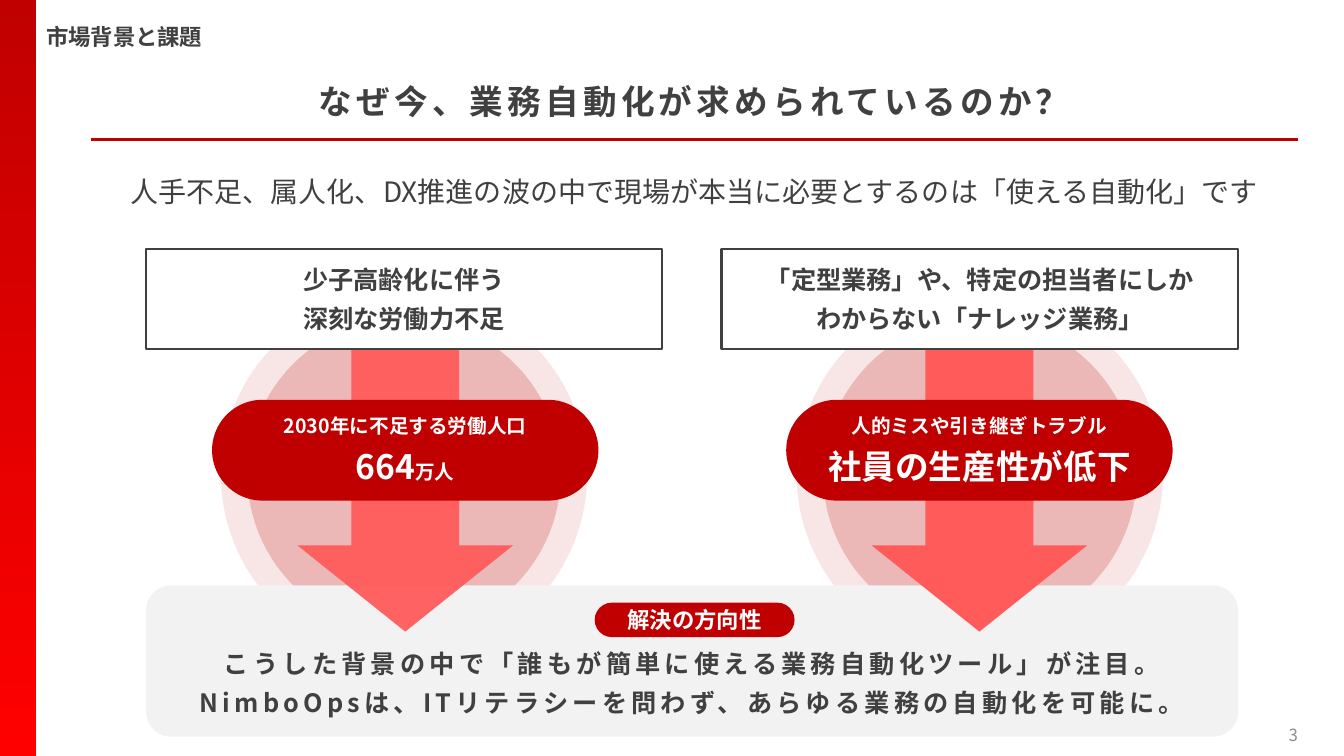
from lxml.etree import SubElement
from pptx import Presentation
from pptx.dml.color import RGBColor
from pptx.enum.shapes import MSO_CONNECTOR, MSO_SHAPE as Preset
from pptx.enum.text import MSO_ANCHOR as Anchor, PP_ALIGN as Align
from pptx.oxml.ns import qn
from pptx.util import Inches, Pt

COLUMNS, ROWS = 160, 90
RED, CORAL, DARK, WHITE, PALE, GREY = "C00000", "FF5B5B", "404040", "FFFFFF", "F2F2F2", "8C8C8C"


def color(hex_string):
    return RGBColor.from_string(hex_string)


class SlideBuilder:
    """Draws on one slide; every length is in columns or rows of the grid."""

    font_name = "Noto Sans CJK JP"

    def __init__(self, presentation):
        self.column = presentation.slide_width / COLUMNS
        self.row = presentation.slide_height / ROWS
        self.slide = presentation.slides.add_slide(presentation.slide_layouts[6])

    def place(self, left, top, width, height):
        return (round(left * self.column), round(top * self.row),
                round(width * self.column), round(height * self.row))

    def shape(self, preset, box, fill, opacity=100, line=None, adjustments=()):
        shape = self.slide.shapes.add_shape(preset, *self.place(*box))
        shape.shadow.inherit = False
        for index, value in enumerate(adjustments):
            shape.adjustments[index] = value
        shape.fill.solid()
        shape.fill.fore_color.rgb = color(fill)
        if opacity < 100:
            srgb = shape._element.spPr.find(".//" + qn("a:srgbClr"))
            SubElement(srgb, qn("a:alpha"), val=str(opacity * 1000))
        if line:
            shape.line.color.rgb = color(line)
            shape.line.width = Pt(1.5)
        else:
            shape.line.fill.background()
        return shape

    def centered(self, preset, center, top, width, height, fill, **style):
        return self.shape(preset, (center - width / 2, top, width, height), fill, **style)

    def gradient_bar(self, box, colors):
        bar = self.shape(Preset.RECTANGLE, box, colors[0])
        bar.fill.gradient()
        bar.fill.gradient_angle = 270
        for stop, stop_color in zip(bar.fill.gradient_stops, colors):
            stop.color.rgb = color(stop_color)

    def rule(self, left, right, top, line):
        x, y, width, _ = self.place(left, top, right - left, 0)
        connector = self.slide.shapes.add_connector(MSO_CONNECTOR.STRAIGHT, x, y, x + width, y)
        connector.line.color.rgb = color(line)
        connector.line.width = Pt(2)
        SubElement(connector._element.spPr, qn("a:effectLst"))

    def text_box(self, box, text, size, **style):
        self.set_text(self.slide.shapes.add_textbox(*self.place(*box)), [[(text, size)]], **style)

    def set_text(self, shape, paragraphs, ink=DARK, bold=True, align=Align.CENTER,
                 anchor=Anchor.MIDDLE, before=0, after=0, leading=1.0, tracking=0,
                 inset_top=0.05, inset_bottom=0.05):
        """Fill a shape with paragraphs, each a list of (text, size) runs."""
        frame = shape.text_frame
        frame.word_wrap = True
        frame.vertical_anchor = anchor
        frame.margin_top, frame.margin_bottom = Inches(inset_top), Inches(inset_bottom)
        for index, runs in enumerate(paragraphs):
            paragraph = frame.add_paragraph() if index else frame.paragraphs[0]
            paragraph.alignment = align
            paragraph.line_spacing = leading
            paragraph.space_before, paragraph.space_after = Pt(before), Pt(after)
            font = paragraph.font
            font.name, font.bold, font.size = self.font_name, bold, Pt(runs[0][1])
            font.color.rgb = color(ink)
            defaults = paragraph._p.pPr.defRPr
            SubElement(defaults, qn("a:ea"), typeface=self.font_name)
            if tracking:
                defaults.set("spc", str(tracking * 100))
            for text, size in runs:
                run = paragraph.add_run()
                run.text = text
                if size != runs[0][1]:
                    run.font.size = Pt(size)


def main():
    presentation = Presentation()
    presentation.slide_width, presentation.slide_height = Inches(13.33), Inches(7.5)
    builder = SlideBuilder(presentation)

    # One entry per issue: box center, arrow center, arrow opacity, box lines, pill runs
    issues = [
        (116.65, 116.6, 100, ["「定型業務」や、特定の担当者にしか", "わからない「ナレッジ業務」"],
         [[("人的ミスや引き継ぎトラブル", 14)], [("社員の生産性が低下", 24)]]),
        (48.1, 48.25, 95, ["少子高齢化に伴う", "深刻な労働力不足"],
         [[("2030年に不足する労働人口", 14)], [("664", 24), ("万人", 14)]]),
    ]

    for center, *_ in issues:
        for diameter, opacity in ((43.6, 10), (37.3, 20)):
            builder.centered(Preset.OVAL, center, 56.5 - diameter / 2, diameter, diameter,
                             RED, opacity=opacity)

    panel = builder.shape(Preset.ROUNDED_RECTANGLE, (17.4, 69.7, 130, 18), PALE)
    builder.set_text(panel, [[("こうした背景の中で「誰もが簡単に使える業務自動化ツール」が注目。", 18)],
                             [("NimboOpsは、ITリテラシーを問わず、あらゆる業務の自動化を可能に。", 18)]],
                     anchor=Anchor.BOTTOM, after=6, tracking=3, inset_bottom=0.12)

    for _, center, opacity, *_ in issues:
        builder.centered(Preset.DOWN_ARROW, center, 41.6, 25.7, 33.6, CORAL,
                         opacity=opacity, adjustments=(0.5, 0.4))

    builder.text_box((4.3, 1.2, 45.7, 6.2), "市場背景と課題", 16, align=Align.LEFT)
    builder.text_box((10.8, 9.2, 143.7, 7.6), "なぜ今、業務自動化が求められているのか？", 24,
                     anchor=Anchor.TOP, leading=0.9, after=12, tracking=3, inset_top=0.08)
    builder.rule(10.8, 154.5, 16.6, RED)
    builder.text_box((10.8, 16.9, 143.7, 10.9),
                     "人手不足、属人化、DX推進の波の中で現場が本当に必要とするのは「使える自動化」です",
                     20, bold=False, leading=1.2, before=10, after=12)

    for center, pill_center, _, lines, pill_text in issues:
        box = builder.centered(Preset.RECTANGLE, center, 29.6, 61.5, 12, WHITE, line=DARK)
        builder.set_text(box, [[(line, 18)] for line in lines], after=6)
        pill = builder.centered(Preset.ROUNDED_RECTANGLE, pill_center, 47.6, 46, 12, RED,
                                adjustments=(0.5,))
        builder.set_text(pill, pill_text, ink=WHITE, before=6)

    label = builder.centered(Preset.ROUNDED_RECTANGLE, 82.7, 71.75, 23.8, 4.1, RED,
                             adjustments=(0.5,))
    builder.set_text(label, [[("解決の方向性", 16)]], ink=WHITE)
    builder.text_box((119.7, 85.1, 36, 4.8), "3", 12, ink=GREY, bold=False, align=Align.RIGHT)
    builder.gradient_bar((0, 0, 4.3, ROWS), (RED, "FF0000"))
    presentation.save("out.pptx")


if __name__ == "__main__":
    main()
